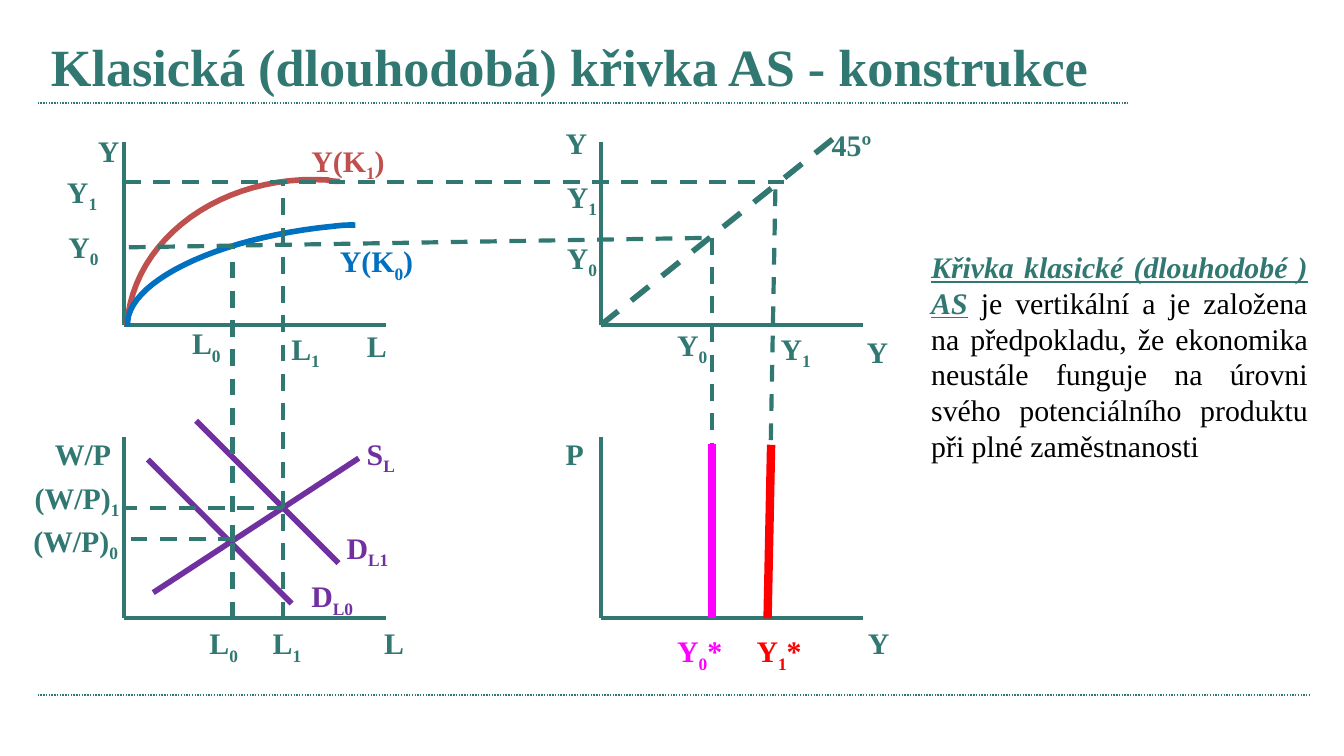
from lxml import etree
from pptx import Presentation
from pptx.dml.color import RGBColor
from pptx.enum.dml import MSO_LINE_DASH_STYLE as Dash
from pptx.enum.shapes import MSO_CONNECTOR as Connector
from pptx.enum.text import MSO_ANCHOR as Anchor, MSO_AUTO_SIZE as AutoSize, PP_ALIGN as Align
from pptx.oxml.ns import qn
from pptx.util import Pt

COLORS = {"teal": "307871", "red_curve": "C0504D", "blue": "0070C0", "purple": "7030A0",
          "magenta": "FF00FF", "red": "FF0000", "black": "000000"}


class Diagram:
    font_name = "Times New Roman"
    label_size = 16
    label_height = 26.6

    def __init__(self, slide):
        self.slide = slide

    def style_line(self, line, color, width, dash=None):
        line.color.rgb = RGBColor.from_string(COLORS[color])
        line.width = Pt(width)
        if dash:
            line.dash_style = dash

    def line(self, start, end, color="teal", width=2.25, dash=None):
        connector = self.slide.shapes.add_connector(
            Connector.STRAIGHT, *(Pt(v) for v in (*start, *end)))
        self.style_line(connector.line, color, width, dash)
        etree.SubElement(connector._element.spPr, qn("a:effectLst"))

    def guide(self, start, end, width=2.25):
        self.line(start, end, width=width, dash=Dash.DASH)

    def axes(self, left, top, bottom, length=140.4):
        self.line((left, top), (left, bottom))
        self.line((left, bottom), (left + length, bottom))

    def curve(self, start, segments, color, steps=24):
        """Draw cubic Bézier segments, each given as two controls and an end point."""
        points, origin = [], start
        for control_1, control_2, end in segments:
            for step in range(1, steps + 1):
                t = step / steps
                weights = ((1 - t) ** 3, 3 * t * (1 - t) ** 2, 3 * t ** 2 * (1 - t), t ** 3)
                corners = (origin, control_1, control_2, end)
                points.append(tuple(Pt(sum(w * c[axis] for w, c in zip(weights, corners)))
                                    for axis in (0, 1)))
            origin = end
        builder = self.slide.shapes.build_freeform(Pt(start[0]), Pt(start[1]))
        builder.add_line_segments(points, close=False)
        shape = builder.convert_to_shape()
        shape.shadow.inherit = False
        shape.fill.background()
        self.style_line(shape.line, color, 3)

    def text_box(self, left, top, width, height):
        box = self.slide.shapes.add_textbox(Pt(left), Pt(top), Pt(width), Pt(height))
        box.text_frame.word_wrap = True
        return box.text_frame

    def run(self, paragraph, words, color="teal", size=label_size, bold=True,
            emphasis=False, subscript=False):
        run = paragraph.add_run()
        run.text = words
        font = run.font
        font.name, font.size, font.bold = self.font_name, Pt(size), bold
        font.italic = font.underline = emphasis
        font.color.rgb = RGBColor.from_string(COLORS[color])
        if subscript:
            run._r.get_or_add_rPr().set("baseline", "-25000")

    def title(self, words):
        frame = self.text_box(20.2, 15.1, 589.7, 40.3)
        frame.vertical_anchor = Anchor.MIDDLE
        self.run(frame.paragraphs[0], words, size=28)

    def label(self, left, top, width, base, index="", tail="", color="teal"):
        frame = self.text_box(left, top, width, self.label_height)
        frame.auto_size = AutoSize.SHAPE_TO_FIT_TEXT
        paragraph = frame.paragraphs[0]
        self.run(paragraph, base, color)
        if index:
            self.run(paragraph, index, color, subscript=True)
        if tail:
            self.run(paragraph, tail, color)

    def explanation(self, term, words):
        frame = self.text_box(491.8, 129.6, 216, 123.8)
        frame.auto_size = AutoSize.SHAPE_TO_FIT_TEXT
        paragraph = frame.paragraphs[0]
        paragraph.alignment = Align.JUSTIFY
        self.run(paragraph, term, emphasis=True)
        self.run(paragraph, words, "black", bold=False)


# Shared positions of the four panels
LEFT, RIGHT = 66.4, 321.8
UPPER_TOP, UPPER_BASE = 76.3, 174.2
LOWER_TOP, LOWER_BASE = 234, 331.3
LABOUR_0, LABOUR_1 = 124.6, 151.8
OUTPUT_0, OUTPUT_1 = 381.5, 411.2
WAGE_0, WAGE_1 = 288.9, 272
LEVEL_0, LEVEL_1 = 132.5, 97.7

LABELS = [
    # axis names
    (457.9, 331.2, 29.5, "Y"), (295.9, 229.7, 29.5, "P"), (457.2, 175, 29.5, "Y"),
    (295.9, 63.4, 43.2, "Y"), (45.4, 67.7, 29.5, "Y"), (189.4, 172.1, 29.5, "L"),
    (198.7, 331.2, 29.5, "L"), (22.3, 229.7, 52.6, "W/P"),
    # curve names
    (159.8, 72.7, 59.8, "Y(K", "1", ")", "red_curve"),
    (175, 126.7, 68.4, "Y(K", "0", ")", "blue"),
    (189.4, 229.7, 38.9, "S", "L", "", "purple"),
    (159.8, 306, 45.4, "D", "L0", "", "purple"),
    (178.6, 280.1, 48.2, "D", "L1", "", "purple"),
    (438.5, 64.1, 46.8, "45º"),
    # marked values
    (105.1, 331.2, 38.2, "L", "0"), (139, 331.2, 41, "L", "1"),
    (95.8, 170.6, 36.7, "L", "0"), (149, 173.5, 41, "L", "1"),
    (10.8, 276.5, 67, "(W/P)", "0"), (11.5, 253.4, 66.2, "(W/P)", "1"),
    (29.5, 118.8, 41, "Y", "0"), (28.8, 89.3, 42.5, "Y", "1"),
    (296.6, 124.6, 36, "Y", "0"), (296.6, 92.2, 51.1, "Y", "1"),
    (355.7, 171.4, 42.5, "Y", "0"), (411.1, 173.5, 38.2, "Y", "1"),
    (355.7, 335.5, 42.5, "Y", "0", "*", "magenta"),
    (398.2, 335.5, 59, "Y", "1", "*", "red"),
]


def main():
    presentation = Presentation()
    presentation.slide_width, presentation.slide_height = Pt(720), Pt(405)
    diagram = Diagram(presentation.slides.add_slide(presentation.slide_layouts[6]))

    for rule_y, rule_end in ((55.2, 604.1), (372.3, 702)):
        diagram.line((20.2, rule_y), (rule_end, rule_y), width=0.75, dash=Dash.ROUND_DOT)
    diagram.title("Klasická (dlouhodobá) křivka AS - konstrukce")

    for axis_x in (LEFT, RIGHT):
        diagram.axes(axis_x, UPPER_TOP, UPPER_BASE)
        diagram.axes(axis_x, LOWER_TOP, LOWER_BASE)

    # Production functions
    diagram.curve((182.2, 97.2), [((180, 97.2), (177.8, 97.2), (175.7, 96.5)),
                                  ((119.5, 92.9), (71.3, 127.4), (68, 174.2))], "red_curve")
    diagram.curve((190.4, 120.6), [((186.1, 120.4), (182.2, 120.8), (178.6, 121.2)),
                                   ((115.2, 127.4), (66.2, 151.9), (68.4, 175))], "blue")

    # Labour supply and demand
    for start, end in (((82.1, 317.5), (192.2, 245.5)), ((79.2, 246.2), (156.2, 323.3)),
                       ((105.1, 225.4), (181.4, 301.7))):
        diagram.line(start, end, "purple", 3)

    # Projections between the panels
    diagram.guide((RIGHT, UPPER_BASE), (449.3, 72), width=3)
    for start, end in (
        ((LABOUR_0, LOWER_BASE), (LABOUR_0, WAGE_0)), ((126, WAGE_0), (LEFT, WAGE_0)),
        ((LABOUR_0, 290.2), (LABOUR_0, LEVEL_0)), ((69.1, LEVEL_0), (OUTPUT_0, 127.4)),
        ((OUTPUT_0, 127.4), (OUTPUT_0, LOWER_BASE)),
        ((LABOUR_1, LOWER_BASE), (LABOUR_1, WAGE_1)), ((LABOUR_1, WAGE_1), (LEFT, WAGE_1)),
        ((LABOUR_1, WAGE_1), (LABOUR_1, LEVEL_1)), ((LEFT, LEVEL_1), (419.8, LEVEL_1)),
        ((415.4, 101.5), (OUTPUT_1, LOWER_BASE)),
    ):
        diagram.guide(start, end)

    # Long-run supply
    diagram.line((OUTPUT_0, 237.6), (OUTPUT_0, LOWER_BASE), "magenta", 4.5)
    diagram.line((413.1, 238.3), (OUTPUT_1, LOWER_BASE), "red", 4.5)

    for label in LABELS:
        diagram.label(*label)
    diagram.explanation(
        "Křivka klasické (dlouhodobé ) AS",
        " je vertikální a je založena na předpokladu, že ekonomika neustále funguje "
        "na úrovni svého potenciálního produktu při plné zaměstnanosti")

    presentation.save("out.pptx")


if __name__ == "__main__":
    main()
